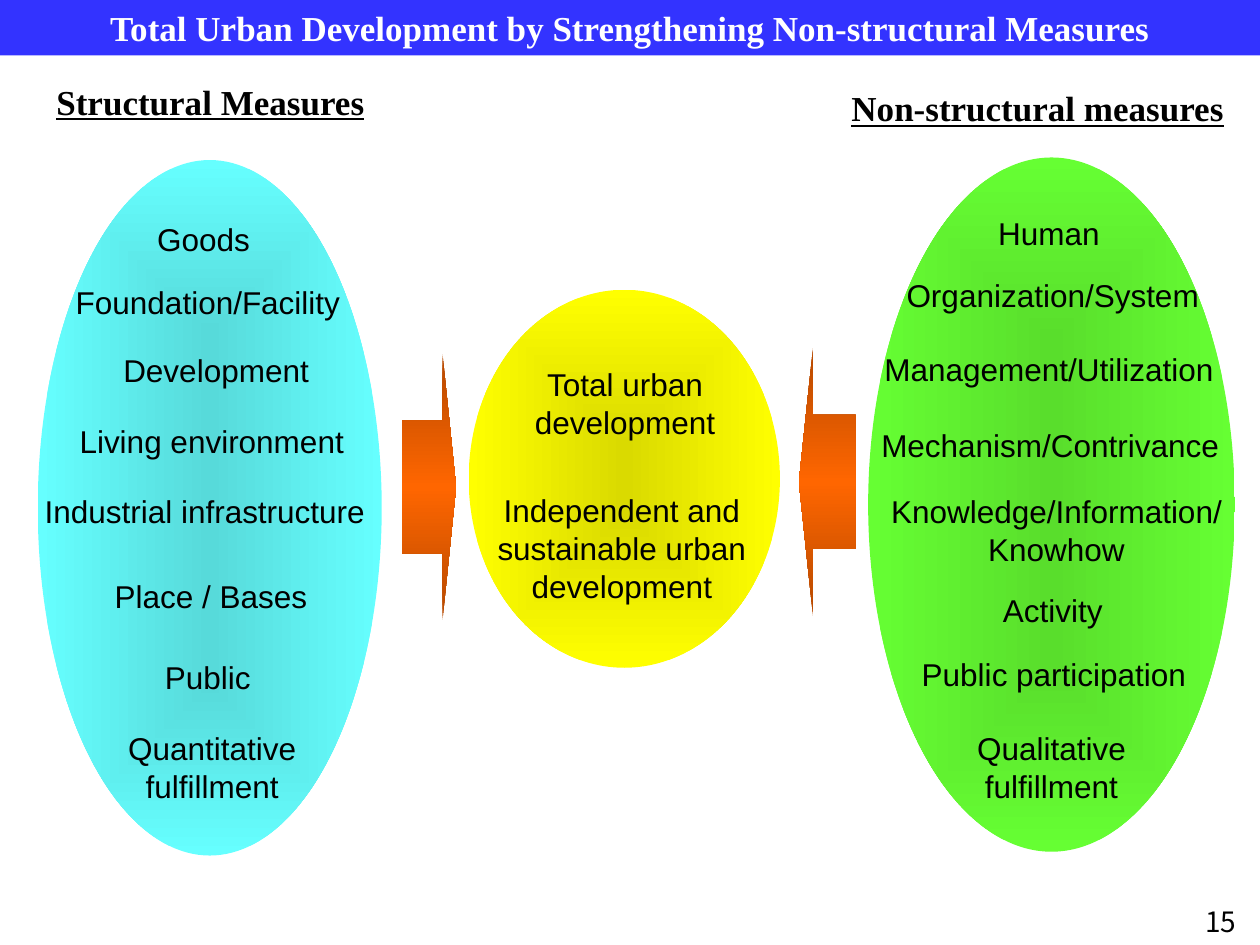
from pptx import Presentation
from pptx.dml.color import RGBColor
from pptx.enum.shapes import MSO_SHAPE as Shape
from pptx.enum.text import MSO_ANCHOR as Anchor, PP_ALIGN as Align
from pptx.oxml import parse_xml
from pptx.oxml.ns import nsdecls
from pptx.util import Inches, Pt

COLORS = {
    "banner": "3333FF", "white": "FFFFFF", "black": "000000",
    "yellow": "FFFF00", "olive": "DADA00",
    "cyan": "66FFFF", "teal": "57DADA",
    "green": "66FF33", "leaf": "59DE2C",
    "orange": "FF6600", "rust": "B64900",
}
COLUMNS, ROWS = 100, 75
SERIF, SANS, NUMBER = "Times New Roman", "Arial", "Noto Sans CJK JP"
RADIAL = '<a:path path="shape"><a:fillToRect l="50000" t="50000" r="50000" b="50000"/></a:path>'
VERTICAL = '<a:lin ang="5400000" scaled="1"/>'


def write_text(shape, text, font=SANS, size=18, color="black", bold=False,
               underline=False, wrap=True, anchor=Anchor.TOP):
    """Put one centred, formatted paragraph into a shape."""
    frame = shape.text_frame
    frame.word_wrap = wrap
    frame.vertical_anchor = anchor
    paragraph = frame.paragraphs[0]
    paragraph.alignment = Align.CENTER
    run = paragraph.add_run()
    run.text = text
    run.font.name = font
    run.font.size = Pt(size)
    run.font.bold = bold
    run.font.underline = underline
    run.font.color.rgb = RGBColor.from_string(COLORS[color])


class SlideBuilder:
    """Draws styled elements on a slide grid of 100 columns by 75 rows."""

    def __init__(self, presentation):
        self.slide = presentation.slides.add_slide(presentation.slide_layouts[6])
        self.column = presentation.slide_width / COLUMNS
        self.row = presentation.slide_height / ROWS

    def place(self, left, top, width, height):
        return (round(left * self.column), round(top * self.row),
                round(width * self.column), round(height * self.row))

    def block(self, kind, area, color):
        shape = self.slide.shapes.add_shape(kind, *self.place(*area))
        shape.shadow.inherit = False
        shape.fill.solid()
        shape.fill.fore_color.rgb = RGBColor.from_string(COLORS[color])
        shape.line.fill.background()
        return shape

    def gradient(self, kind, area, colors, direction):
        shape = self.block(kind, area, colors[0])
        step = 100000 // (len(colors) - 1)
        stops = "".join(
            f'<a:gs pos="{index * step}"><a:srgbClr val="{COLORS[color]}"/></a:gs>'
            for index, color in enumerate(colors))
        fill = parse_xml(f'<a:gradFill {nsdecls("a")} rotWithShape="1">'
                         f'<a:gsLst>{stops}</a:gsLst>{direction}</a:gradFill>')
        properties = shape._element.spPr
        properties.replace(properties.find("{*}solidFill"), fill)
        return shape

    def ellipse(self, area, center, edge):
        self.gradient(Shape.OVAL, area, (center, edge), RADIAL)

    def arrow(self, kind, area):
        shape = self.gradient(kind, area, ("rust", "orange", "rust"), VERTICAL)
        shape.adjustments[0], shape.adjustments[1] = 0.5, 0.25

    def label(self, text, area, **style):
        box = self.slide.shapes.add_textbox(*self.place(*area))
        write_text(box, text, **style)

    def labels(self, entries):
        for text, left, top, width, lines in entries:
            self.label(text, (left, top, width, 1 + 3 * lines), wrap=lines > 1)

    def banner(self, text, area):
        shape = self.block(Shape.RECTANGLE, area, "banner")
        write_text(shape, text, font=SERIF, size=20, color="white", bold=True,
                   anchor=Anchor.MIDDLE)


STRUCTURAL = [
    ("Goods", 10.9, 17, 10.5, 1),
    ("Foundation/Facility", 4.9, 22, 23.2, 1),
    ("Development", 7.1, 27.4, 20.1, 1),
    ("Living environment", 3.4, 33, 26.8, 1),
    ("Industrial infrastructure", 0, 38.6, 32.5, 1),
    ("Place / Bases", 4.4, 45.3, 24.7, 1),
    ("Public", 12, 51.7, 9, 1),
    ("Quantitative fulfillment", 6.2, 57.4, 21.3, 2),
]
NON_STRUCTURAL = [
    ("Human", 78.1, 16.5, 10.3, 1),
    ("Organization/System", 70.8, 21.4, 25.5, 1),
    ("Management/Utilization", 68.7, 27.3, 29.1, 1),
    ("Mechanism/Contrivance", 68.7, 33.3, 29.3, 1),
    ("Knowledge/Information/ Knowhow", 67.7, 38.6, 32.3, 2),
    ("Activity", 77.9, 46.4, 11.3, 1),
    ("Public participation", 71.3, 51.5, 24.7, 1),
    ("Qualitative fulfillment", 74.4, 57.4, 18.1, 2),
]
GOALS = [
    ("Total urban development", 36.2, 28.5, 26.8, 2),
    ("Independent and sustainable urban development", 36.4, 38.5, 25.9, 3),
]
HEADINGS = [
    ("Structural Measures", (3.3, 5.9, 26.8, 4.4)),
    ("Non-structural measures", (66.4, 6.4, 31.9, 4.4)),
]


def main():
    presentation = Presentation()
    presentation.slide_width, presentation.slide_height = Inches(10), Inches(7.5)
    builder = SlideBuilder(presentation)
    builder.ellipse((37.2, 23, 24.7, 30), "olive", "yellow")
    builder.ellipse((3, 12.7, 27.3, 55.2), "teal", "cyan")
    builder.ellipse((68.9, 12.5, 29.1, 55.1), "leaf", "green")
    builder.arrow(Shape.RIGHT_ARROW, (31.9, 28.1, 4.3, 21.1))
    builder.arrow(Shape.LEFT_ARROW, (63.4, 27.6, 4.5, 21.3))
    for text, area in HEADINGS:
        builder.label(text, area, font=SERIF, size=20, bold=True,
                      underline=True, wrap=False)
    for entries in (GOALS, STRUCTURAL, NON_STRUCTURAL):
        builder.labels(entries)
    builder.banner("Total Urban Development by Strengthening Non-structural Measures",
                   (0, 0, 100, 4.4))
    builder.label("15", (93.8, 71.3, 6.2, 3.7), font=NUMBER, size=16)
    presentation.save("out.pptx")


if __name__ == "__main__":
    main()
